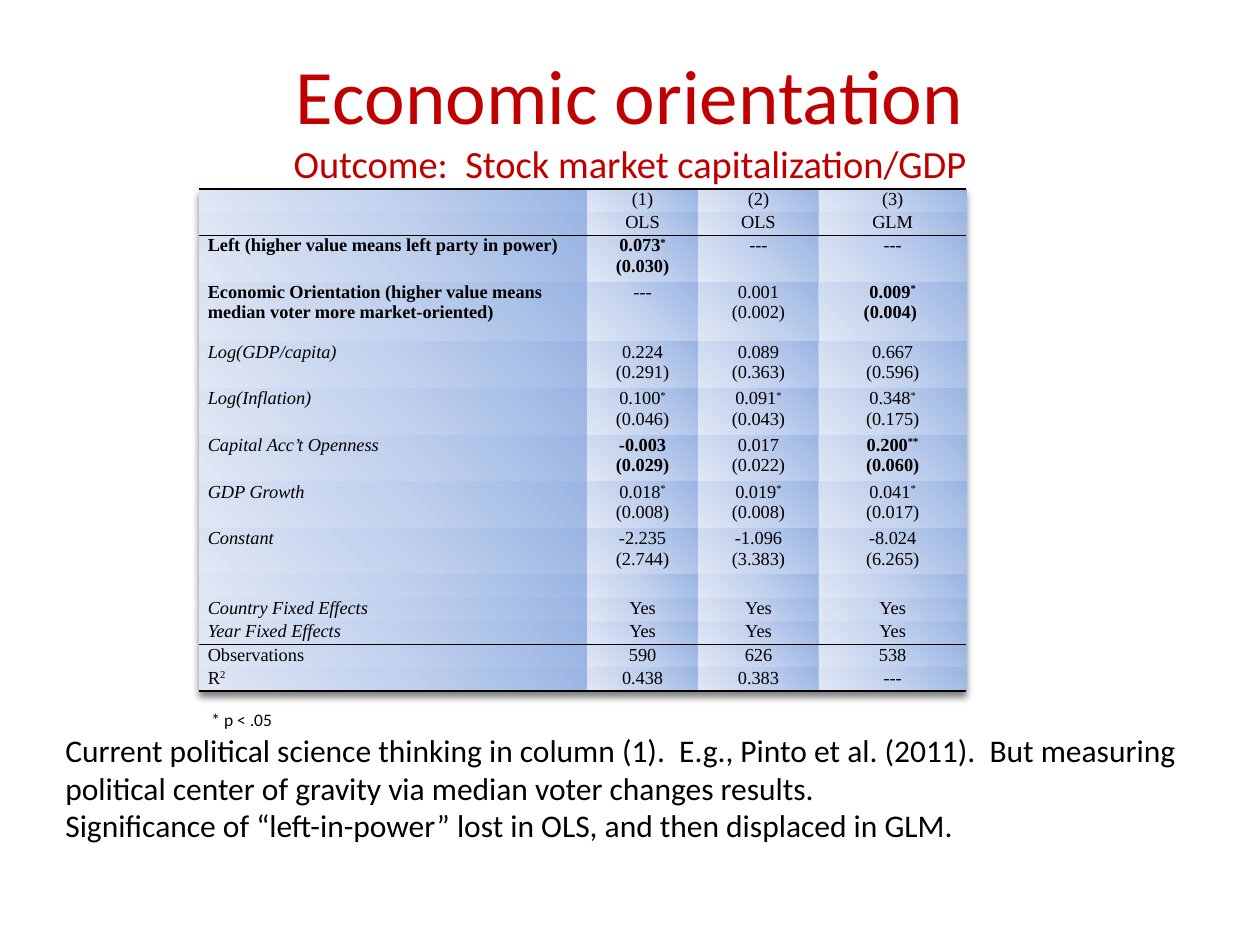
from lxml import etree
from pptx import Presentation
from pptx.dml import color
from pptx.enum import text
from pptx.oxml import ns, parse_xml
from pptx.util import Inches, Pt

COLORS = {"title": "C00000", "ink": "000000", "deep": "9AB5E4", "middle": "C2D1ED", "pale": "E1E8F5"}
NAMESPACE = ns.nsdecls("a")
NO_STYLE = "{2D5ABB26-0587-4C30-8999-92F81FD0307C}"
COLUMNS = [3.08, 0.88, 0.96, 1.17]
LINE, TWO_LINES, THREE_LINES = 0.185, 0.37, 0.475
RESULTS = [
    (LINE, "", "(1)", "(2)", "(3)"),
    (LINE, "", "OLS", "OLS", "GLM"),
    (TWO_LINES, "Left (higher value means left party in power)", "0.073^*^\n(0.030)", "---", "---"),
    (THREE_LINES, "Economic Orientation (higher value means median voter more market-oriented)",
     "---", "0.001\n(0.002)", "0.009^*^\n(0.004) "),
    (TWO_LINES, "Log(GDP/capita)", "0.224\n(0.291)", "0.089\n(0.363)", "0.667\n(0.596)"),
    (TWO_LINES, "Log(Inflation)", "0.100^*^\n(0.046)", "0.091^*^\n(0.043)", "0.348^*^\n(0.175)"),
    (TWO_LINES, "Capital Acc’t Openness", "-0.003\n(0.029)", "0.017\n(0.022)", "0.200^**^\n(0.060)"),
    (TWO_LINES, "GDP Growth", "0.018^*^\n(0.008)", "0.019^*^\n(0.008)", "0.041^*^\n(0.017)"),
    (TWO_LINES, "Constant", "-2.235\n(2.744)", "-1.096\n(3.383)", "-8.024\n(6.265)"),
    (LINE, "", "", "", ""),
    (LINE, "Country Fixed Effects", "Yes", "Yes", "Yes"),
    (LINE, "Year Fixed Effects", "Yes", "Yes", "Yes"),
    (LINE, "Observations", "590", "626", "538"),
    (LINE, "R^2^", "0.438", "0.383", "---"),
]
BOLD = {(2, 0), (2, 1), (3, 0), (3, 3), (6, 1), (6, 3)}
ITALIC_ROWS = range(4, 12)
RULES = {0: "T", 1: "B", 11: "B", 13: "B"}


def set_font(font, size, name="Calibri", tone="ink"):
    """Set the size, typeface and colour of a font."""
    font.size = Pt(size)
    font.name = name
    font.color.rgb = color.RGBColor.from_string(COLORS[tone])


def add_title(page):
    """Fill the title placeholder with a heading and a smaller subtitle."""
    title = page.shapes.title
    title.left, title.top, title.width, title.height = map(Inches, (0.5, 0.3, 9, 1.25))
    title.text_frame.vertical_anchor = text.MSO_ANCHOR.MIDDLE
    para = title.text_frame.paragraphs[0]
    para.alignment = text.PP_ALIGN.CENTER
    for words, size in (("Economic orientation", 44), ("Outcome:  Stock market capitalization/GDP", 22)):
        if para.runs:
            para.add_line_break()
        span = para.add_run()
        span.text = words
        set_font(span.font, size, tone="title")


def add_text(page, left, top, width, height, lines, size, wrap=True):
    """Add a text box with one paragraph per line."""
    box = page.shapes.add_textbox(*map(Inches, (left, top, width, height)))
    box.text_frame.word_wrap = wrap
    box.text_frame.text = "\n".join(lines)
    for para in box.text_frame.paragraphs:
        set_font(para.font, size)


def write_cell(cell, words, bold, italic, centred):
    """Write cell text, raising the parts between carets."""
    cell.margin_left = cell.margin_right = Inches(0.07)
    cell.margin_top = cell.margin_bottom = 0
    para = cell.text_frame.paragraphs[0]
    para.alignment = text.PP_ALIGN.CENTER if centred else text.PP_ALIGN.LEFT
    set_font(para.font, 10.5, "Times New Roman")
    para.font.bold, para.font.italic = bold, italic
    for number, line in enumerate(words.split("\n")):
        if number:
            para.add_line_break()
        for position, part in enumerate(line.split("^")):
            if part:
                span = para.add_run()
                span.text = part
                if position % 2:
                    span._r.get_or_add_rPr().set("baseline", "30000")
    for line_break in para._p.findall(ns.qn("a:br")):
        etree.SubElement(line_break, ns.qn("a:rPr"), sz="1050")
    etree.SubElement(para._p, ns.qn("a:endParaRPr"), sz="1050")


def paint_cell(cell, rule):
    """Give a cell its gradient and, where wanted, a rule on one side."""
    properties = cell._tc.get_or_add_tcPr()
    if rule:
        properties.append(parse_xml(
            f'<a:ln{rule} {NAMESPACE} w="12700"><a:solidFill><a:srgbClr val="{COLORS["ink"]}"/>'
            f'</a:solidFill></a:ln{rule}>'))
    stops = "".join(f'<a:gs pos="{place}"><a:srgbClr val="{COLORS[tone]}"/></a:gs>'
                    for place, tone in ((0, "deep"), (50000, "middle"), (100000, "pale")))
    properties.append(parse_xml(
        f'<a:gradFill {NAMESPACE}><a:gsLst>{stops}</a:gsLst><a:path path="circle">'
        '<a:fillToRect l="100000" b="100000"/></a:path></a:gradFill>'))


def add_results(page):
    """Add the regression table with its shadow."""
    heights = [row[0] for row in RESULTS]
    frame = page.shapes.add_table(len(RESULTS), len(COLUMNS), Inches(1.58), Inches(1.5),
                                  Inches(sum(COLUMNS)), Inches(sum(heights)))
    table = frame.table
    table.first_row = table.horz_banding = False
    properties = table._tbl.tblPr
    properties.find(ns.qn("a:tableStyleId")).text = NO_STYLE
    properties.insert(0, parse_xml(
        f'<a:effectLst {NAMESPACE}><a:outerShdw blurRad="50800" dist="38100" dir="5400000">'
        f'<a:srgbClr val="{COLORS["ink"]}"><a:alpha val="50000"/></a:srgbClr></a:outerShdw></a:effectLst>'))
    for column, width in zip(table.columns, COLUMNS):
        column.width = Inches(width)
    for row, (height, *entries) in enumerate(RESULTS):
        table.rows[row].height = Inches(height)
        for column, words in enumerate(entries):
            cell = table.cell(row, column)
            write_cell(cell, words, (row, column) in BOLD, column == 0 and row in ITALIC_ROWS, column > 0)
            paint_cell(cell, RULES.get(row))


def main():
    """Build the slide and save it."""
    deck = Presentation()
    deck.slide_width, deck.slide_height = Inches(10), Inches(7.5)
    page = deck.slides.add_slide(deck.slide_layouts[5])
    add_title(page)
    add_results(page)
    add_text(page, 0.42, 5.75, 9.08, 1.01, [
        "Current political science thinking in column (1).  E.g., Pinto et al. (2011).  "
        "But measuring political center of gravity via median voter changes results.",
        "Significance of “left-in-power” lost in OLS, and then displaced in GLM.",
    ], 18)
    add_text(page, 1.58, 5.58, 0.69, 0.27, ["* p < .05"], 10, wrap=False)
    deck.save("out.pptx")


if __name__ == "__main__":
    main()
